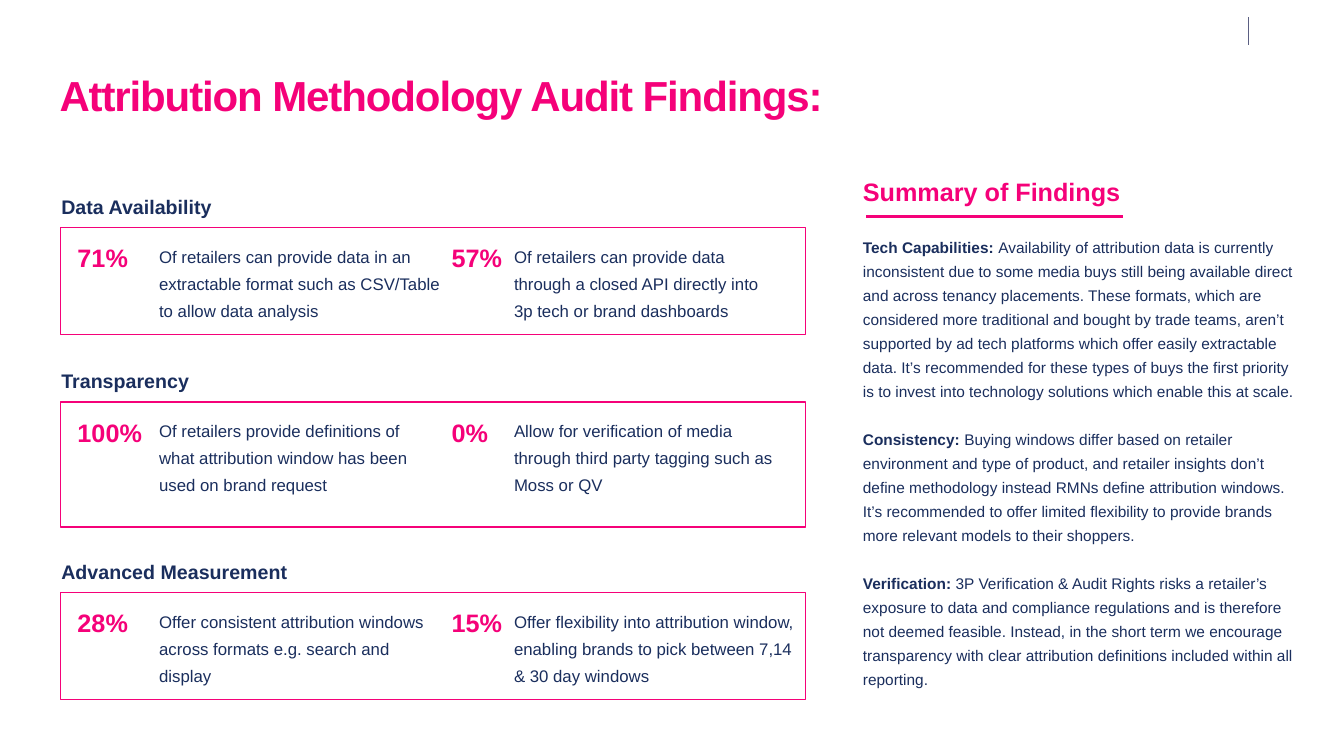
import dataclasses

import pptx
import pptx.dml.color
import pptx.enum.shapes
import pptx.enum.text
import pptx.oxml
import pptx.oxml.ns
import pptx.util

PX = 9144
ALIGN = pptx.enum.text.PP_ALIGN
ANCHOR = pptx.enum.text.MSO_ANCHOR


@dataclasses.dataclass(frozen=True)
class Theme:
    """Hold the font, colours and type sizes of the slide."""
    font: str = "Arial"
    pink: str = "F50179"
    navy: str = "1A2E5D"
    grey: str = "5B5F82"
    title: int = 30
    large: int = 18
    head: int = 14
    body: int = 12
    note: int = 11
    lead: float = 19.3


THEME = Theme()

PANELS = [
    ("Data Availability", 226, 106, [
        ("71%", "Of retailers can provide data in an extractable format such as CSV/Table to allow data analysis", 303),
        ("57%", "Of retailers can provide data through a closed API directly into 3p tech or brand dashboards", 280),
    ]),
    ("Transparency", 399, 124, [
        ("100%", "Of retailers provide definitions of what attribution window has been used on brand request", 291),
        ("0%", "Allow for verification of media through third party tagging such as Moss or QV", 280),
    ]),
    ("Advanced Measurement", 588, 106, [
        ("28%", "Offer consistent attribution windows across formats e.g. search and display", 291),
        ("15%", "Offer flexibility into attribution window, enabling brands to pick between 7,14 & 30 day windows", 303),
    ]),
]

NOTES = [
    ("Tech Capabilities: ", "Availability of attribution data is currently inconsistent due to some media buys still being available direct and across tenancy placements. These formats, which are considered more traditional and bought by trade teams, aren’t supported by ad tech platforms which offer easily extractable data. It’s recommended for these types of buys the first priority is to invest into technology solutions which enable this at scale."),
    ("Consistency: ", "Buying windows differ based on retailer environment and type of product, and retailer insights don’t define methodology instead RMNs define attribution windows. It’s recommended to offer limited flexibility to provide brands more relevant models to their shoppers."),
    ("Verification: ", "3P Verification & Audit Rights risks a retailer’s exposure to data and compliance regulations and is therefore not deemed feasible. Instead, in the short term we encourage transparency with clear attribution definitions included within all reporting."),
]


def scale(*sizes):
    """Turn px lengths into EMU."""
    return [pptx.util.Emu(size * PX) for size in sizes]


def paint(code):
    """Return the colour for a hex code."""
    return pptx.dml.color.RGBColor.from_string(code)


def style(para, size, color, bold=None):
    """Set the font of a paragraph."""
    font = para.font
    font.name = THEME.font
    font.size = pptx.util.Pt(size)
    font.color.rgb = paint(color)
    font.bold = bold


def add_box(slide, *area):
    """Add an empty wrapping text box and return its frame."""
    frame = slide.shapes.add_textbox(*scale(*area)).text_frame
    frame.word_wrap = True
    return frame


def add_text(slide, text, area, size, color, bold=False, lead=None):
    """Add one paragraph, centred in height unless its lead is fixed."""
    frame = add_box(slide, *area)
    para = frame.paragraphs[0]
    para.text = text
    style(para, size, color, bold)
    if lead:
        para.line_spacing = pptx.util.Pt(lead)
    else:
        frame.vertical_anchor = ANCHOR.MIDDLE


def add_line(slide, ends, color, width):
    """Add a straight line without a shadow."""
    kind = pptx.enum.shapes.MSO_CONNECTOR.STRAIGHT
    line = slide.shapes.add_connector(kind, *scale(*ends))
    line.line.color.rgb = paint(color)
    line.line.width = pptx.util.Pt(width)
    props = line._element.spPr
    props.append(pptx.oxml.parse_xml(f"<a:effectLst {pptx.oxml.ns.nsdecls('a')}/>"))


def set_title(slide, text):
    """Place and format the title."""
    shape = slide.shapes.title
    shape.left, shape.top, shape.width, shape.height = scale(0, 0, 1295, 145)
    frame = shape.text_frame
    frame.margin_left, frame.margin_top = scale(59, 79)
    frame.auto_size = pptx.enum.text.MSO_AUTO_SIZE.NONE
    frame.vertical_anchor = ANCHOR.TOP
    para = frame.paragraphs[0]
    para.text = text
    para.alignment = ALIGN.LEFT
    para.line_spacing = 0.8
    style(para, THEME.title, THEME.pink, True)
    para.runs[0].font._element.set("spc", "-80")


def add_panel(slide, head, top, height, facts):
    """Add a heading and a framed pair of figures."""
    kind = pptx.enum.shapes.MSO_SHAPE.RECTANGLE
    rect = slide.shapes.add_shape(kind, *scale(60, top, 739, height))
    rect.shadow.inherit = False
    rect.fill.background()
    rect.line.color.rgb = paint(THEME.pink)
    rect.line.width = pptx.util.Pt(1)
    add_text(slide, head, (51, top - 46, 564, 50), THEME.head, THEME.navy, True)
    for (share, text, width), left, start in zip(facts, (67, 438), (148, 500)):
        add_text(slide, text, (start, top + 7, width, 87), THEME.body, THEME.navy, lead=THEME.lead)
        add_text(slide, share, (left, top + 13, 85, 37), THEME.large, THEME.pink, True, THEME.lead)


def add_notes(slide, notes):
    """Add the summary paragraphs, each with a bold lead-in."""
    frame = add_box(slide, 846, 226, 448, 465)
    for index, (label, text) in enumerate(notes):
        para = frame.add_paragraph() if index else frame.paragraphs[0]
        para.line_spacing = 1.3
        if index:
            para.space_before = pptx.util.Pt(17)
        style(para, THEME.note, THEME.navy)
        run = para.add_run()
        run.text = label
        run.font.bold = True
        para.add_run().text = text


def main():
    """Build and save the slide."""
    deck = pptx.Presentation()
    deck.slide_width, deck.slide_height = scale(1333, 750)
    slide = deck.slides.add_slide(deck.slide_layouts[5])
    add_line(slide, (1238, 17, 1238, 45), THEME.grey, 0.5)
    set_title(slide, "Attribution Methodology Audit Findings:")
    add_text(slide, "Summary of Findings", (846, 165, 277, 50), THEME.large, THEME.pink, True)
    add_line(slide, (859, 215, 1114, 215), THEME.pink, 2.25)
    add_notes(slide, NOTES)
    for panel in PANELS:
        add_panel(slide, *panel)
    deck.save("out.pptx")


if __name__ == "__main__":
    main()
